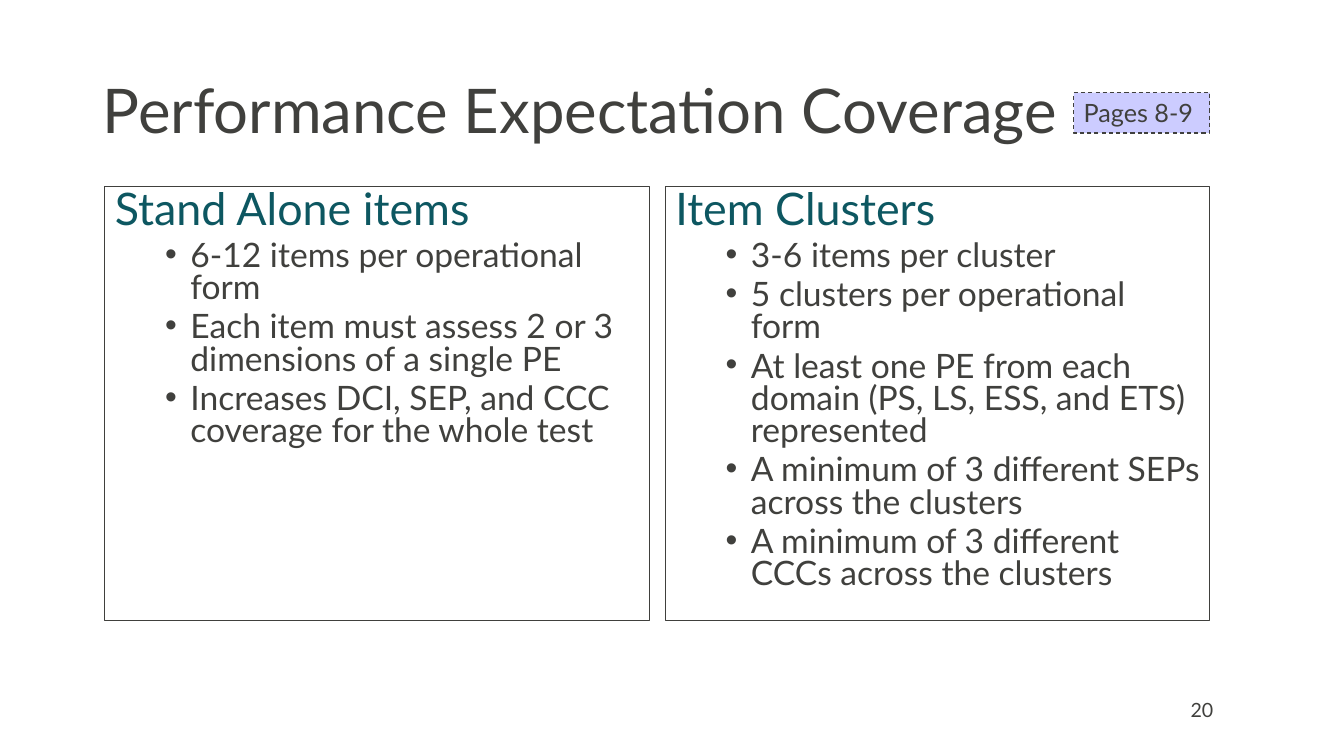
from lxml import etree
from pptx import Presentation
from pptx.dml.color import RGBColor
from pptx.enum.dml import MSO_LINE
from pptx.enum.shapes import MSO_SHAPE
from pptx.enum.text import MSO_ANCHOR, PP_ALIGN
from pptx.oxml.ns import qn
from pptx.util import Inches, Pt

RECT = MSO_SHAPE.RECTANGLE
DASH = MSO_LINE.DASH
TOP, MID = MSO_ANCHOR.TOP, MSO_ANCHOR.MIDDLE
LEFT = PP_ALIGN.LEFT

FONT, INK, TEAL, LILAC = "Lato", "40403D", "0D5761", "CCCCFF"
TITLE = "Performance Expectation Coverage"
PAGES = "Pages 8-9"
NUMBER = "20"
PANELS = [
    ("Stand Alone items", [
        "6-12 items per operational form",
        "Each item must assess 2 or 3 dimensions of a single PE",
        "Increases DCI, SEP, and CCC coverage for the whole test",
    ]),
    ("Item Clusters", [
        "3-6 items per cluster",
        "5 clusters per operational form",
        "At least one PE from each domain (PS, LS, ESS, and ETS) represented",
        "A minimum of 3 different SEPs across the clusters",
        "A minimum of 3 different CCCs across the clusters",
    ]),
]

WIDE, HIGH = 13.33, 7.5
EDGE, ROW = 1.04, 1.85
COL, GAP, DEEP = 5.4, 0.16, 4.31
RIGHT = EDGE + 2 * COL + GAP
TAG = 1.35


def color(code):
    return RGBColor.from_string(code)


def style(para, size, code, lines=1.0, before=0):
    para.alignment = LEFT
    para.line_spacing = lines
    para.space_before = Pt(before)
    for run in para.runs:
        run.font.name = FONT
        run.font.size = Pt(size)
        run.font.color.rgb = color(code)


def bullet(para):
    props = para._p.get_or_add_pPr()
    props.set("marL", str(Inches(0.75)))
    props.set("indent", str(Inches(-0.25)))
    etree.SubElement(props, qn("a:buFont")).set("typeface", "Arial")
    etree.SubElement(props, qn("a:buChar")).set("char", "•")


def box(slide, left, top, width, height, fill=None, dash=None):
    shape = slide.shapes.add_shape(
        RECT, Inches(left), Inches(top), Inches(width), Inches(height))
    shape.shadow.inherit = False
    if fill:
        shape.fill.solid()
        shape.fill.fore_color.rgb = color(fill)
    else:
        shape.fill.background()
    shape.line.color.rgb = color(INK)
    shape.line.width = Pt(0.75)
    if dash:
        shape.line.dash_style = dash
    shape.text_frame.word_wrap = True
    shape.text_frame.vertical_anchor = TOP
    return shape.text_frame


def main():
    deck = Presentation()
    deck.slide_width, deck.slide_height = Inches(WIDE), Inches(HIGH)
    slide = deck.slides.add_slide(deck.slide_layouts[5])

    title = slide.shapes.title
    title.left, title.top = Inches(0.92), Inches(0.4)
    title.width, title.height = Inches(11.5), Inches(1.45)
    title.text_frame.text = TITLE
    title.text_frame.vertical_anchor = MID
    style(title.text_frame.paragraphs[0], 44, INK, 0.9)

    for col, (head, items) in enumerate(PANELS):
        frame = box(slide, EDGE + col * (COL + GAP), ROW, COL, DEEP)
        frame.text = head
        style(frame.paragraphs[0], 32, TEAL, 0.8)
        for item in items:
            para = frame.add_paragraph()
            para.text = item
            para.level = 1
            style(para, 24, INK, 0.8, 5)
            bullet(para)

    tag = box(slide, RIGHT - TAG, 0.92, TAG, 0.4, LILAC, DASH)
    tag.text = PAGES
    style(tag.paragraphs[0], 18, INK)

    foot = slide.shapes.add_textbox(
        Inches(11.71), Inches(6.84), Inches(0.7), Inches(0.4)).text_frame
    foot.word_wrap = True
    foot.vertical_anchor = MID
    foot.text = NUMBER
    style(foot.paragraphs[0], 14, INK)

    deck.save("out.pptx")


if __name__ == "__main__":
    main()
